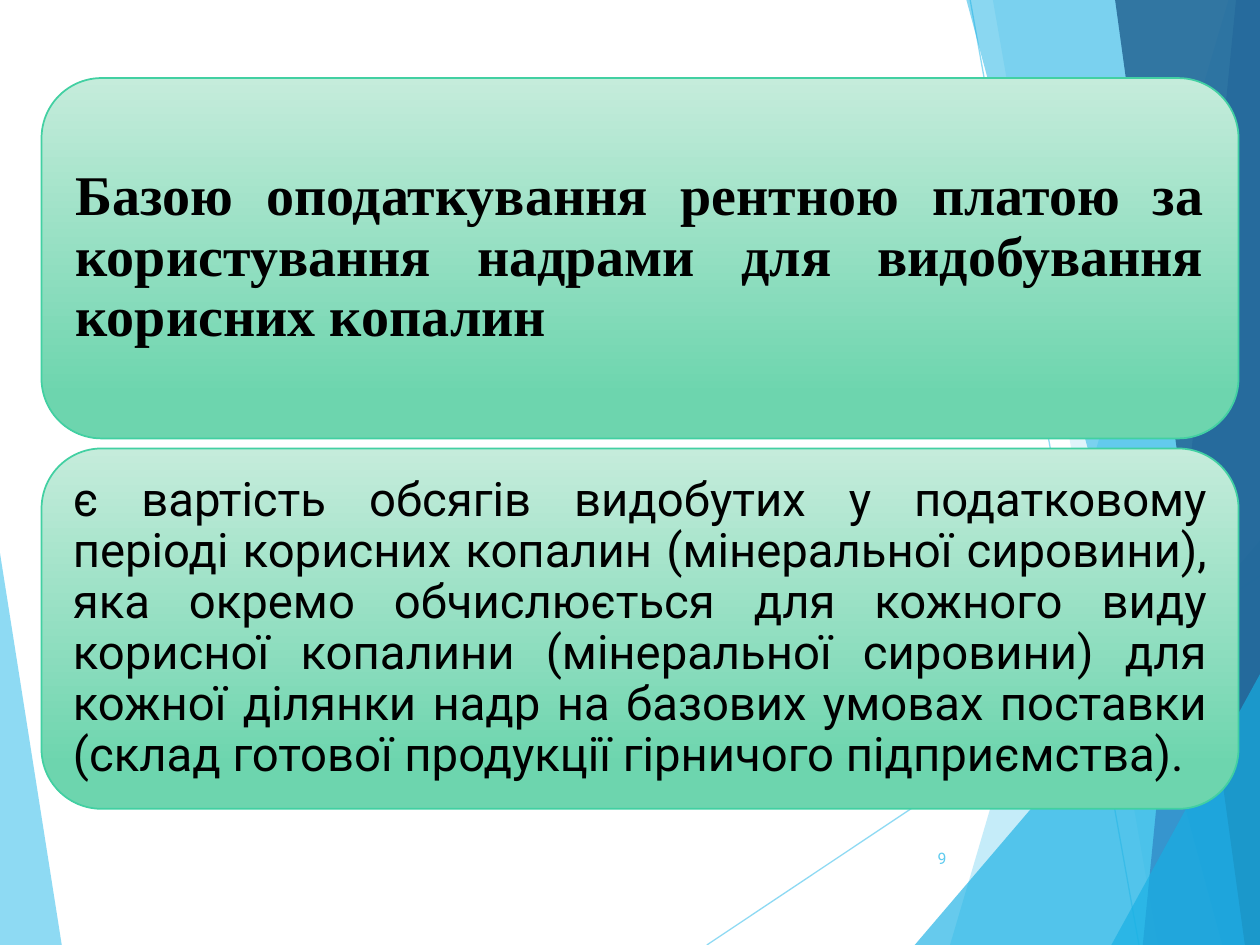
from dataclasses import dataclass

import pptx
import pptx.dml.color
import pptx.enum.shapes
import pptx.enum.text
import pptx.oxml
import pptx.oxml.ns
import pptx.util
from pptx.util import Inches

COLORS = {
    "sky": "5FCBEF",
    "azure": "17B0E4",
    "blue": "2E83C3",
    "navy": "226292",
    "mint": "C5ECDB",
    "green": "6DD5AE",
    "edge": "42D0A2",
    "text": "000000",
}
W, H = 10, 7.5
ALIGN = pptx.enum.text.PP_ALIGN
MIDDLE = pptx.enum.text.MSO_ANCHOR.MIDDLE


@dataclass
class Facet:
    points: list[tuple[float, float]]
    color: str
    opacity: int


@dataclass
class Ray:
    start: tuple[float, float]
    end: tuple[float, float]


@dataclass
class Card:
    text: str
    font: dict
    margin: float


LEFT_FACET = Facet([(0, 4.39), (0.49, H), (0, H)], "sky", 70)
RAYS = [Ray((5.61, H), (W, 4.57)), Ray((7.7, 0), (9.04, H))]
RIGHT_FACETS = [
    Facet([(9.75, 0), (7.54, H), (W, H), (W, 0)], "sky", 36),
    Facet([(7.88, 0), (9.19, H), (W, H), (W, 0)], "sky", 20),
    Facet([(7.26, H), (W, 4.29), (W, H)], "azure", 66),
    Facet([(7.67, 0), (9.7, H), (W, H), (W, 0)], "azure", 50),
    Facet([(9.81, 0), (9.07, H), (W, H), (W, 0)], "blue", 70),
    Facet([(8.85, 0), (9.88, H), (W, H), (W, 0)], "navy", 82),
    Facet([(8.82, H), (W, 5.35), (W, H)], "azure", 66),
]
CARDS = [
    Card(
        "Базою оподаткування рентною платою за користування надрами "
        "для видобування корисних копалин",
        {"name": "Times New Roman", "size": pptx.util.Pt(32), "bold": True},
        0.13,
    ),
    Card(
        "є вартість обсягів видобутих у податковому періоді корисних копалин "
        "(мінеральної сировини), яка окремо обчислюється для кожного виду "
        "корисної копалини (мінеральної сировини) для кожної ділянки надр "
        "на базових умовах поставки (склад готової продукції гірничого "
        "підприємства).",
        {"name": "Roboto", "size": pptx.util.Pt(27)},
        0.11,
    ),
]
CARD_LEFT, CARD_TOP, CARD_WIDTH, CARD_HEIGHT = 0.33, 0.62, 9.5, 2.86
CARD_GAP = 0.08


def rgb(name: str) -> pptx.dml.color.RGBColor:
    return pptx.dml.color.RGBColor.from_string(COLORS[name])


def set_opacity(sp, percent: int) -> None:
    """Make the shape's one solid colour, in fill or line, see-through."""
    color = sp._element.spPr.find(".//" + pptx.oxml.ns.qn("a:srgbClr"))
    color.append(pptx.oxml.parse_xml(
        f'<a:alpha {pptx.oxml.ns.nsdecls("a")} val="{percent * 1000}"/>'))


def draw_facet(slide, facet: Facet) -> None:
    points = [(Inches(x), Inches(y)) for x, y in facet.points]
    builder = slide.shapes.build_freeform(*points[0])
    builder.add_line_segments(points[1:], close=True)
    sp = builder.convert_to_shape()
    sp.shadow.inherit = False
    sp.fill.solid()
    sp.fill.fore_color.rgb = rgb(facet.color)
    sp.line.fill.background()
    set_opacity(sp, facet.opacity)


def draw_ray(slide, ray: Ray) -> None:
    line = slide.shapes.add_connector(
        pptx.enum.shapes.MSO_CONNECTOR.STRAIGHT,
        *(Inches(v) for v in ray.start + ray.end))
    line.line.color.rgb = rgb("sky")
    line.line.width = pptx.util.Pt(0.75)
    set_opacity(line, 70)
    line._element.spPr.append(pptx.oxml.parse_xml(
        f'<a:effectLst {pptx.oxml.ns.nsdecls("a")}/>'))


def write(tf, text: str, align, font: dict, color: str):
    """Fill the text frame with one paragraph and return that paragraph."""
    tf.word_wrap = True
    tf.vertical_anchor = MIDDLE
    p = tf.paragraphs[0]
    p.alignment = align
    r = p.add_run()
    r.text = text
    for key, value in font.items():
        setattr(r.font, key, value)
    r.font.color.rgb = rgb(color)
    return p


def draw_card(slide, card: Card, top: float) -> None:
    sp = slide.shapes.add_shape(
        pptx.enum.shapes.MSO_SHAPE.ROUNDED_RECTANGLE,
        Inches(CARD_LEFT), Inches(top), Inches(CARD_WIDTH), Inches(CARD_HEIGHT))
    sp.shadow.inherit = False
    sp.fill.gradient()
    sp.fill.gradient_angle = 270
    for stop, (position, color) in zip(
            sp.fill.gradient_stops, [(0, "mint"), (0.88, "green")]):
        stop.position = position
        stop.color.rgb = rgb(color)
    sp.line.color.rgb = rgb("edge")
    sp.line.width = pptx.util.Pt(1)
    tf = sp.text_frame
    for side in ("left", "top", "right", "bottom"):
        setattr(tf, f"margin_{side}", Inches(card.margin))
    p = write(tf, card.text, ALIGN.JUSTIFY, card.font, "text")
    p.line_spacing = 0.9


def draw_page_number(slide, number: str) -> None:
    box = slide.shapes.add_textbox(
        Inches(7.05), Inches(6.61), Inches(0.56), Inches(0.4))
    write(box.text_frame, number, ALIGN.RIGHT,
          {"name": "Roboto", "size": pptx.util.Pt(9)}, "sky")


def main() -> None:
    prs = pptx.Presentation()
    prs.slide_width, prs.slide_height = Inches(W), Inches(H)
    slide = prs.slides.add_slide(prs.slide_layouts[6])
    draw_facet(slide, LEFT_FACET)
    for ray in RAYS:
        draw_ray(slide, ray)
    for facet in RIGHT_FACETS:
        draw_facet(slide, facet)
    for i, card in enumerate(CARDS):
        draw_card(slide, card, CARD_TOP + i * (CARD_HEIGHT + CARD_GAP))
    draw_page_number(slide, "9")
    prs.save("out.pptx")


if __name__ == "__main__":
    main()
